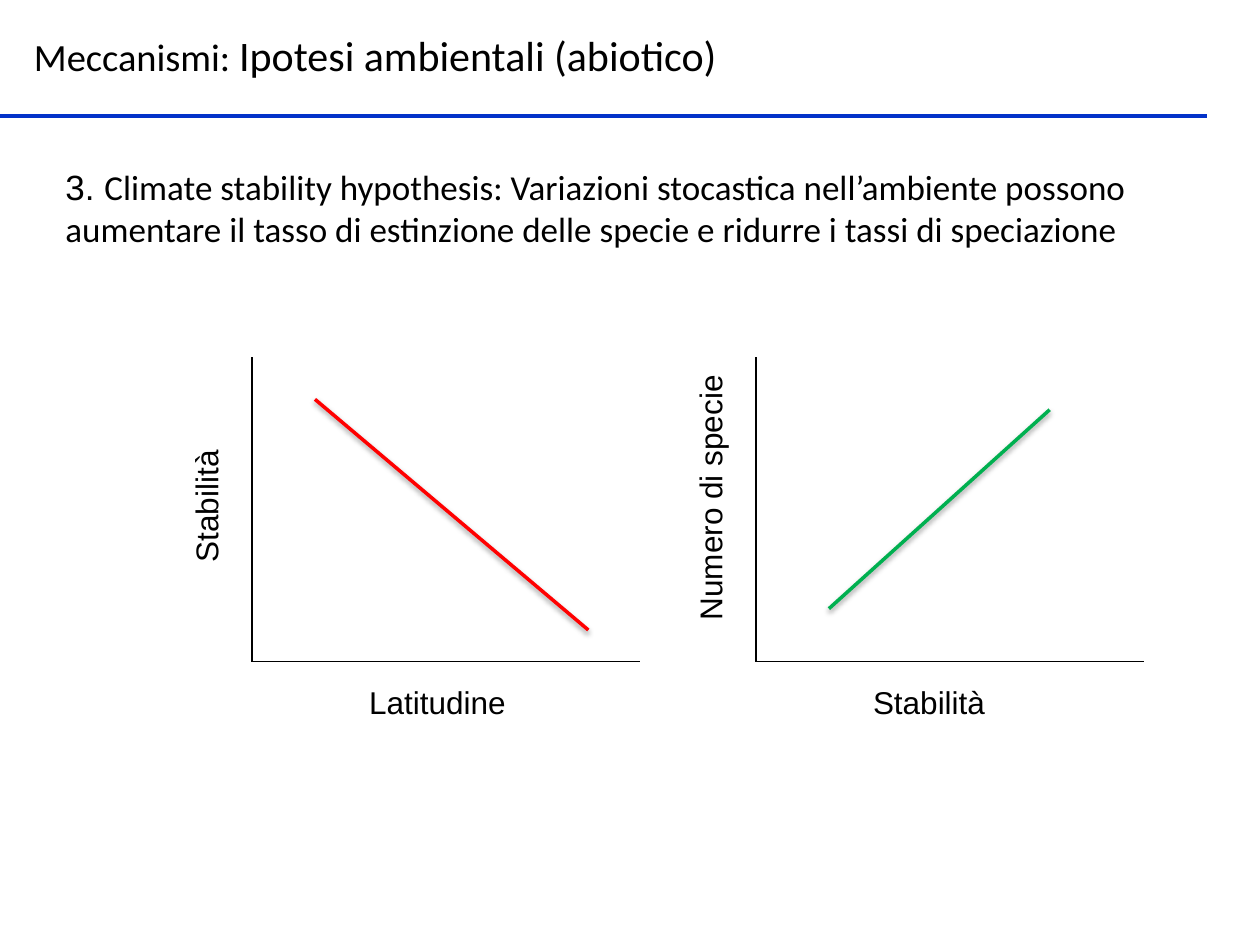
import pptx
import pptx.dml.color
import pptx.enum.shapes
import pptx.enum.text
import pptx.oxml
import pptx.util
from pptx.util import Cm

A_NS = "http://schemas.openxmlformats.org/drawingml/2006/main"
SHADOW = (
    '<a:outerShdw blurRad="40000" dist="20000" dir="5400000" rotWithShape="0">'
    '<a:srgbClr val="000000"><a:alpha val="38000"/></a:srgbClr></a:outerShdw>'
)


def rgb(value):
    """Turn a hex string into a colour."""
    return pptx.dml.color.RGBColor.from_string(value)


def add_line(s, x1, y1, x2, y2, color, width, effect=""):
    """Draw a straight line between two points given in centimetres."""
    sp = s.shapes.add_connector(
        pptx.enum.shapes.MSO_CONNECTOR.STRAIGHT, Cm(x1), Cm(y1), Cm(x2), Cm(y2))
    sp.line.color.rgb = rgb(color)
    sp.line.width = pptx.util.Pt(width)
    sp._element.spPr.append(pptx.oxml.parse_xml(
        f'<a:effectLst xmlns:a="{A_NS}">{effect}</a:effectLst>'))


def fill_text(sp, runs):
    """Write runs of (text, font, size) as one left-aligned paragraph."""
    tf = sp.text_frame
    tf.word_wrap = True
    tf.vertical_anchor = pptx.enum.text.MSO_ANCHOR.MIDDLE
    p = tf.paragraphs[0]
    p.alignment = pptx.enum.text.PP_ALIGN.LEFT
    for text, font, size in runs:
        r = p.add_run()
        r.text = text
        r.font.name = font
        r.font.size = pptx.util.Pt(size)
        r.font.color.rgb = rgb("000000")


def add_text(s, left, top, width, height, runs, rotation=0):
    """Add a text box, sizes in centimetres."""
    sp = s.shapes.add_textbox(Cm(left), Cm(top), Cm(width), Cm(height))
    sp.rotation = rotation
    fill_text(sp, runs)


def add_header(s, left, top, width, height):
    """Place the title and the rule below it."""
    sp = s.shapes.title
    sp.left, sp.top, sp.width, sp.height = Cm(left), Cm(top), Cm(width), Cm(height)
    fill_text(sp, [("Meccanismi: ", "Calibri", 22),
                   ("Ipotesi ambientali (abiotico)", "Calibri", 24)])
    rule_y = top + height + 0.61
    add_line(s, 0, rule_y, 24.33, rule_y, "0332C9", 2)


def add_hypothesis(s, left, top, width, height):
    """State the hypothesis."""
    add_text(s, left, top, width, height, [
        ("3. ", "Arial", 20),
        ("Climate stability hypothesis: Variazioni stocastica nell’ambiente possono "
         "aumentare il tasso di estinzione delle specie e ridurre i tassi di "
         "speciazione", "Calibri", 20)])


def add_sketch(s, left, top, width, height, x_label, y_label, y_length, trend, color):
    """Sketch a relation: two axes, their labels and a trend line."""
    bottom = top + height
    add_line(s, left, bottom, left, top, "000000", 0.75)
    add_line(s, left, bottom, left + width, bottom, "000000", 0.75)
    x1, y1, x2, y2 = trend
    add_line(s, left + x1, top + y1, left + x2, top + y2, color, 2, SHADOW)
    label_h = 1.02
    add_text(s, left + 2.11, bottom + 0.3, 4.01, label_h, [(x_label, "Arial", 18)])
    center_x, center_y = left - 0.93, top + 2.39
    add_text(s, center_x - y_length / 2, center_y - label_h / 2, y_length, label_h,
             [(y_label, "Arial", 18)], rotation=270)


def main():
    """Build and save the slide."""
    prs = pptx.Presentation()
    prs.slide_width, prs.slide_height = Cm(25.4), Cm(19.05)
    s = prs.slides.add_slide(prs.slide_layouts.get_by_name("Title Only"))
    add_header(s, 0.43, 0.46, 24.13, 1.27)
    add_hypothesis(s, 1.07, 3.2, 23.5, 1.98)
    add_sketch(s, 5.08, 7.19, 7.82, 6.15, "Latitudine", "Stabilità", 4.01,
               (1.27, 0.86, 6.78, 5.51), "FF0000")
    add_sketch(s, 15.24, 7.19, 7.82, 6.15, "Stabilità", "Numero di specie", 6.35,
               (1.47, 5.08, 5.92, 1.07), "00B050")
    prs.save("out.pptx")


if __name__ == "__main__":
    main()
